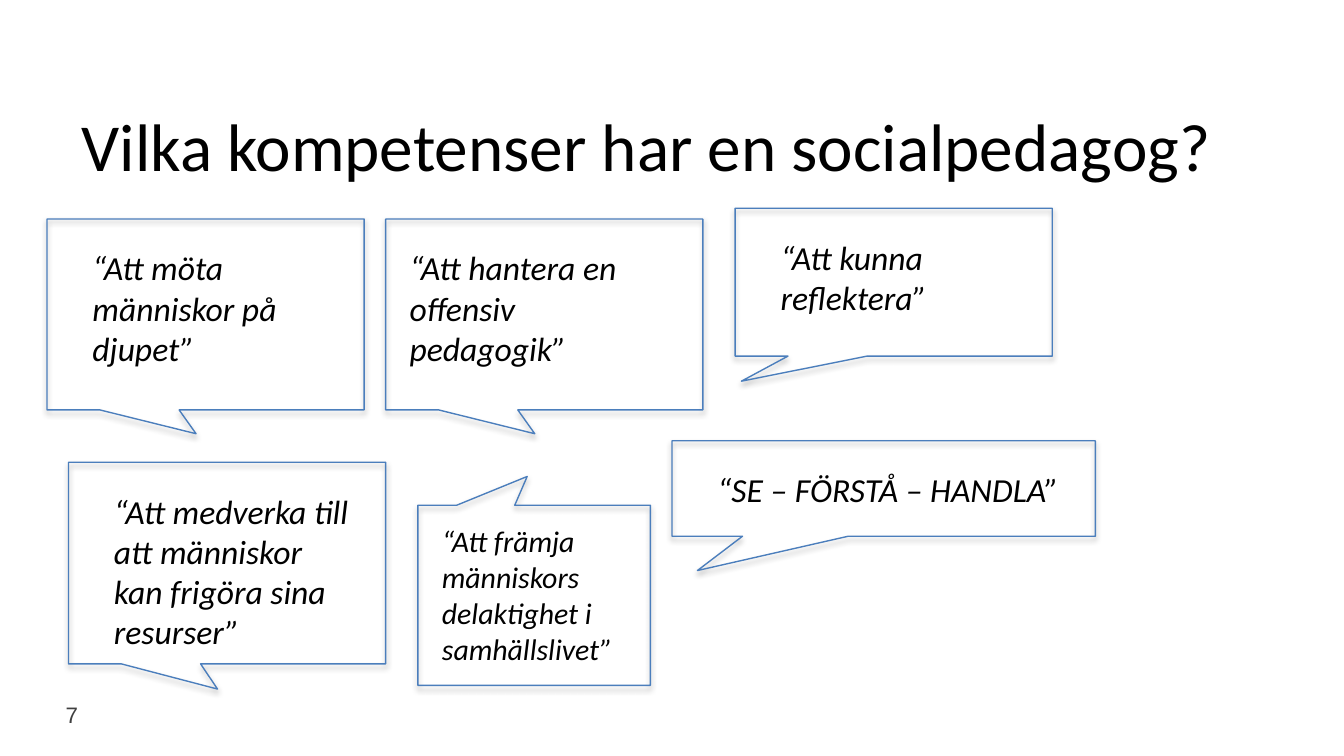
from dataclasses import dataclass

from lxml import etree
from pptx import Presentation
from pptx.dml.color import RGBColor
from pptx.enum.shapes import MSO_SHAPE
from pptx.enum.text import MSO_ANCHOR
from pptx.oxml.ns import qn
from pptx.util import Emu, Pt

CALLOUT = MSO_SHAPE.RECTANGULAR_CALLOUT
TOP, MIDDLE = MSO_ANCHOR.TOP, MSO_ANCHOR.MIDDLE
EMU_PER_PX = 9144  # 100 px to the inch
BLACK, GREY, BLUE = "000000", "404040", "4B7EBC"


@dataclass(frozen=True)
class Box:
    left: int
    top: int
    width: int
    height: int

    def emu(self) -> list[Emu]:
        return [px(n) for n in (self.left, self.top, self.width, self.height)]


@dataclass(frozen=True)
class Quote:
    text: str
    text_box: Box
    bubble: Box
    tip: tuple[float, float]
    size: int = 18


TIP_BELOW = (-0.03, 0.625)
QUOTES = [
    Quote("“Att möta människor på djupet”",
          Box(59, 179, 197, 101), Box(35, 163, 236, 142), TIP_BELOW),
    Quote("“Att kunna reflektera”",
          Box(571, 171, 197, 71), Box(547, 155, 236, 110), (-0.48, 0.67)),
    Quote("“SE – FÖRSTÅ – HANDLA”",
          Box(524, 344, 283, 40), Box(500, 328, 315, 71), (-0.44, 0.86)),
    Quote("“Att medverka till att människor kan frigöra sina resurser”",
          Box(75, 360, 197, 131), Box(51, 344, 236, 150), TIP_BELOW),
    Quote("“Att hantera en offensiv pedagogik”",
          Box(295, 179, 197, 101), Box(287, 163, 236, 142), TIP_BELOW),
    Quote("“Att främja människors delaktighet i samhällslivet”",
          Box(319, 384, 157, 118), Box(311, 376, 173, 134), (-0.03, -0.66), 16),
]


def px(length: int) -> Emu:
    return Emu(length * EMU_PER_PX)


def color(value: str) -> RGBColor:
    return RGBColor.from_string(value)


def add_text(slide, text: str, box: Box, *, size: int, font: str = "Calibri",
             fill: str = BLACK, italic: bool = False, anchor=TOP) -> None:
    frame = slide.shapes.add_textbox(*box.emu()).text_frame
    frame.word_wrap = True
    frame.vertical_anchor = anchor
    span = frame.paragraphs[0].add_run()
    span.text = text
    span.font.name = font
    span.font.size = Pt(size)
    span.font.italic = italic
    span.font.color.rgb = color(fill)


def add_soft_shadow(shape) -> None:
    """Cast a faint shadow straight down."""
    shape.shadow.inherit = False
    effects = shape._element.spPr.find(qn("a:effectLst"))
    shadow = etree.SubElement(
        effects, qn("a:outerShdw"), blurRad=str(Pt(3.1)), dist=str(Pt(1.8)),
        dir=str(90 * 60000), rotWithShape="0")
    tint = etree.SubElement(shadow, qn("a:srgbClr"), val=BLACK)
    etree.SubElement(tint, qn("a:alpha"), val="35000")


def add_bubble(slide, box: Box, tip: tuple[float, float]) -> None:
    bubble = slide.shapes.add_shape(CALLOUT, *box.emu())
    for index, offset in enumerate(tip):
        bubble.adjustments[index] = offset
    bubble.fill.background()
    bubble.line.color.rgb = color(BLUE)
    bubble.line.width = Pt(0.75)
    add_soft_shadow(bubble)


def main() -> None:
    deck = Presentation()
    deck.slide_width = px(1000)
    deck.slide_height = deck.slide_width * 9 // 16
    slide = deck.slides.add_slide(deck.slide_layouts[6])

    add_text(slide, "Vilka kompetenser har en socialpedagog?",
             Box(51, 61, 900, 94), size=36, anchor=MIDDLE)
    add_text(slide, "7", Box(39, 517, 62, 30), size=12, font="Arial",
             fill=GREY, anchor=MIDDLE)
    for quote in QUOTES:
        add_text(slide, quote.text, quote.text_box, size=quote.size, italic=True)
        add_bubble(slide, quote.bubble, quote.tip)

    deck.save("out.pptx")


if __name__ == "__main__":
    main()
